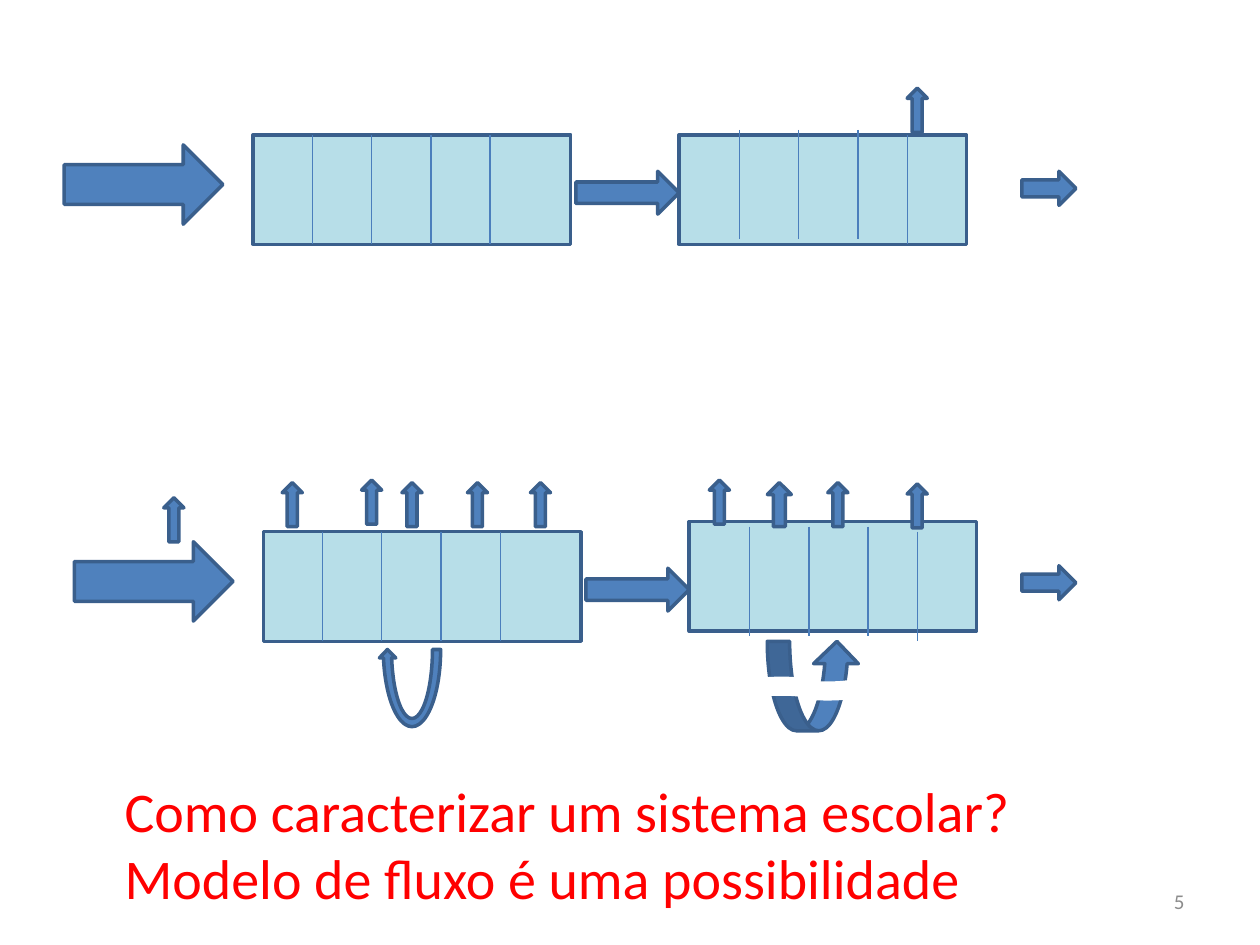
"""Builds the school system flow model slide."""
from pptx import Presentation
from pptx.dml.color import RGBColor
from pptx.enum.shapes import MSO_CONNECTOR, MSO_SHAPE as Preset
from pptx.enum.text import MSO_ANCHOR, PP_ALIGN
from pptx.oxml.ns import qn
from pptx.util import Inches, Pt
from lxml.etree import SubElement

STAGE_BLUE = RGBColor(0xB7, 0xDE, 0xE8)
FLOW_BLUE = RGBColor(0x4F, 0x81, 0xBD)
EDGE_BLUE = RGBColor(0x3A, 0x5F, 0x8C)
DIVIDER_BLUE = RGBColor(0x4B, 0x7E, 0xBC)
WHITE = RGBColor(0xFF, 0xFF, 0xFF)
RED = RGBColor(0xFF, 0x00, 0x00)
GREY = RGBColor(0x8C, 0x8C, 0x8C)

GRADE_WIDTH = 0.47
STAGE_HEIGHT = 0.87
ROW_SHIFT = (0.08, 3.15)
DROPOUTS = [
    (7.2, 3.84, 0.16), (3.19, 3.83, 0.16), (2.24, 3.83, 0.16),
    (2.87, 3.81, 0.16), (3.71, 3.83, 0.16), (6.09, 3.83, 0.19),
    (5.63, 3.81, 0.16), (6.57, 3.83, 0.16), (4.21, 3.83, 0.16),
    (1.3, 3.95, 0.16),
]


def add_block(slide, preset, box, fill=FLOW_BLUE, edge=EDGE_BLUE, flips=()):
    """Add a filled preset shape, outlined unless edge is None."""
    block = slide.shapes.add_shape(preset, *map(Inches, box))
    block.shadow.inherit = False
    block.fill.solid()
    block.fill.fore_color.rgb = fill
    if edge is None:
        block.line.fill.background()
    else:
        block.line.color.rgb = edge
        block.line.width = Pt(2)
    for flip in flips:
        block.element.spPr.xfrm.set(flip, "1")


def add_divider(slide, x, top):
    """Add a thin vertical line between two grades."""
    ends = map(Inches, (x, top, x, top + STAGE_HEIGHT))
    divider = slide.shapes.add_connector(MSO_CONNECTOR.STRAIGHT, *ends)
    divider.line.color.rgb = DIVIDER_BLUE
    divider.line.width = Pt(0.75)
    SubElement(divider.element.spPr, qn("a:effectLst"))


def add_text(slide, box, lines, font_format, align=PP_ALIGN.LEFT, anchor=MSO_ANCHOR.TOP):
    """Add a wrapping text box with one paragraph per line."""
    frame = slide.shapes.add_textbox(*map(Inches, box)).text_frame
    frame.word_wrap = True
    frame.vertical_anchor = anchor
    frame.text = "\n".join(lines)
    color = font_format["color"]
    for paragraph in frame.paragraphs:
        paragraph.alignment = align
        font = paragraph.runs[0].font
        font.color.rgb = color
        for name in ("name", "size"):
            setattr(font, name, font_format[name])


def add_flow(slide, dx, dy, second_stage_top, exit_top):
    """Add one row: intake, first stage, passage, second stage and exit."""
    add_block(slide, Preset.RECTANGLE, (5.39 + dx, second_stage_top, 2.28, STAGE_HEIGHT), STAGE_BLUE)
    add_block(slide, Preset.RECTANGLE, (2.01 + dx, 1.07 + dy, 2.52, STAGE_HEIGHT), STAGE_BLUE)
    for grade in range(4):
        add_divider(slide, 2.48 + dx + grade * GRADE_WIDTH, 1.07 + dy)
    for grade in range(3):
        add_divider(slide, 5.87 + dx + grade * GRADE_WIDTH, 1.03 + dy)
    add_divider(slide, 7.2 + dx, 1.07 + dy)
    add_block(slide, Preset.RIGHT_ARROW, (0.51 + dx, 1.15 + dy, 1.26, 0.63))
    add_block(slide, Preset.RIGHT_ARROW, (4.57 + dx, 1.36 + dy, 0.82, 0.34))
    add_block(slide, Preset.RIGHT_ARROW, (8.11, exit_top, 0.43, 0.27))


def add_dropout(slide, x, top, width=0.16):
    """Add a small upward arrow for pupils who leave."""
    add_block(slide, Preset.UP_ARROW, (x, top, width, 0.35))


def add_repetition(slide):
    """Add the return arrows under the lower row."""
    add_block(slide, Preset.CIRCULAR_ARROW, (3.01, 4.51, 0.52, 1.29), flips=("flipH", "flipV"))
    add_block(slide, Preset.CURVED_UP_ARROW, (6.09, 5.09, 0.73, 0.71))
    add_block(slide, Preset.FLOWCHART_PUNCHED_TAPE, (6.02, 5.37, 0.73, 0.19),
              WHITE, None, ("flipV",))


def main():
    """Build and save the slide."""
    deck = Presentation()
    deck.slide_width, deck.slide_height = Inches(10), Inches(7.5)
    slide = deck.slides.add_slide(deck.slide_layouts[6])
    add_flow(slide, 0, 0, 1.07, 1.36)
    add_dropout(slide, 7.2, 0.7)
    add_flow(slide, *ROW_SHIFT, 4.14, 4.49)
    for dropout in DROPOUTS:
        add_dropout(slide, *dropout)
    add_repetition(slide)
    add_text(slide, (0.89, 6.11, 8.19, 1.18),
             ["Como caracterizar um sistema escolar?", "Modelo de fluxo é uma possibilidade"],
             {"name": "Calibri", "size": Pt(32), "color": RED})
    add_text(slide, (7.17, 6.95, 2.33, 0.4), ["5"],
             {"name": "Calibri", "size": Pt(12), "color": GREY},
             PP_ALIGN.RIGHT, MSO_ANCHOR.MIDDLE)
    deck.save("out.pptx")


if __name__ == "__main__":
    main()
